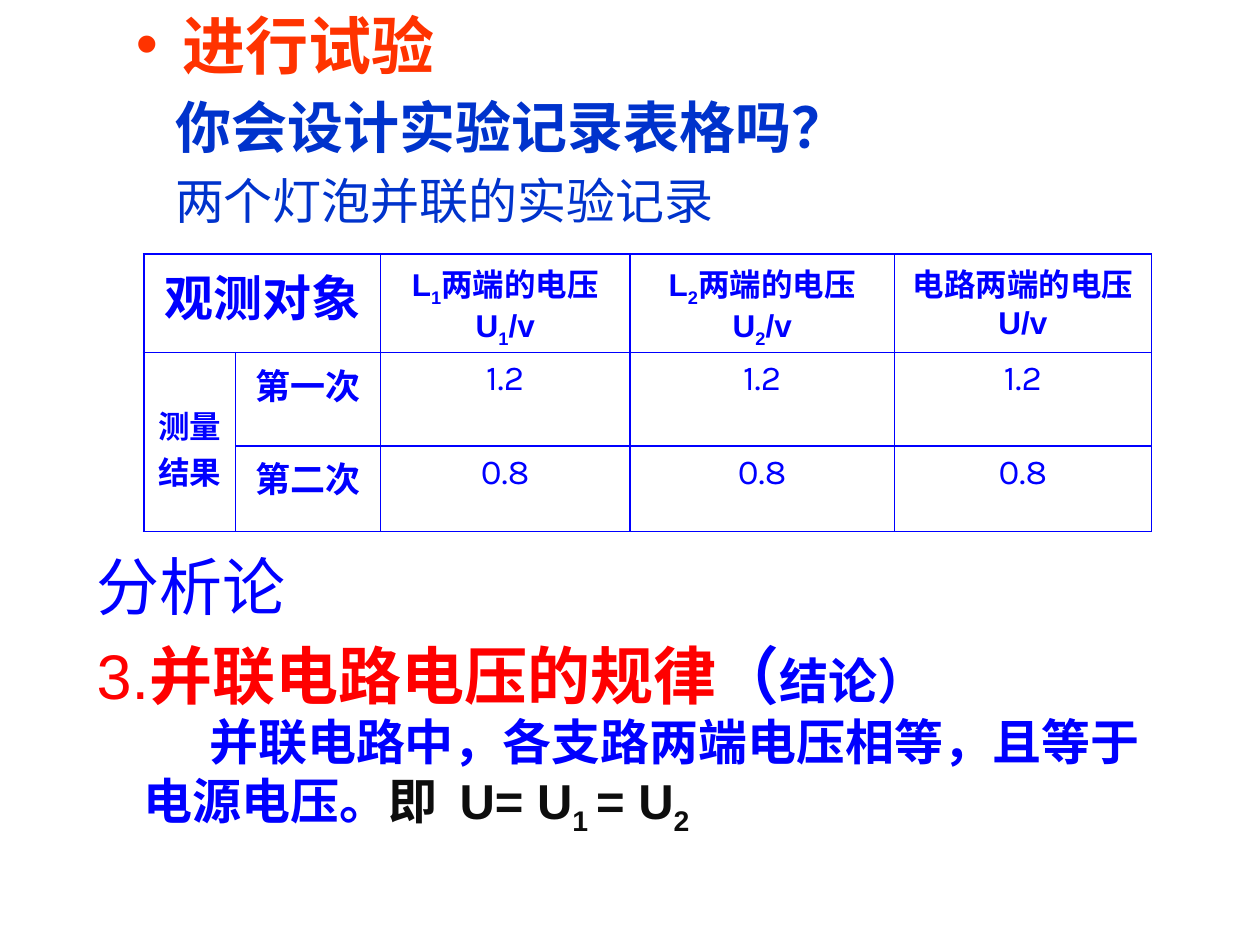
"""Build the slide on recording and concluding the parallel circuit voltage test."""
from dataclasses import dataclass

from lxml import etree
from pptx import Presentation
from pptx.dml.color import RGBColor
from pptx.enum.text import PP_ALIGN
from pptx.oxml.ns import qn
from pptx.util import Cm, Pt

CENTER = PP_ALIGN.CENTER


@dataclass(frozen=True)
class Theme:
    """Colours, fonts and type sizes."""
    orange: str = "FF3300"
    navy: str = "0033CC"
    blue: str = "0000FF"
    red: str = "FF0000"
    ink: str = "0D0D0D"
    body: str = "Calibri"
    sans: str = "Arial"
    figure: str = "Karla"
    title: int = 36
    question: int = 32
    lead: int = 28
    label: int = 20
    cell: int = 18


def add_span(para, text, font, size, color, bold=False, lowered=False):
    """Add one formatted run of text to a paragraph."""
    span = para.add_run()
    span.text = text
    span.font.name = font
    span.font.size = Pt(size)
    span.font.bold = bold
    span.font.color.rgb = RGBColor.from_string(color)
    if lowered:
        span._r.get_or_add_rPr().set("baseline", "-25000")


class Page:
    """Hold the theme and the current slide."""

    def __init__(self, deck, theme):
        """Add a blank slide."""
        self.theme = theme
        self.shapes = deck.slides.add_slide(deck.slide_layouts[6]).shapes

    def text_box(self, left, top, width, height):
        """Add a wrapping text box and return its frame."""
        box = self.shapes.add_textbox(Cm(left), Cm(top), Cm(width), Cm(height))
        box.text_frame.word_wrap = True
        return box.text_frame

    def paragraph(self, frame, spans, before=0.0, margin=0.0, indent=0.0, bullet=None):
        """Write spans into the first empty or a new paragraph."""
        para = frame.paragraphs[0] if not frame.text else frame.add_paragraph()
        para.space_before = Pt(before)
        properties = para._p.get_or_add_pPr()
        properties.set("marL", str(Cm(margin)))
        properties.set("indent", str(Cm(indent)))
        if bullet:
            tint = etree.SubElement(properties, qn("a:buClr"))
            etree.SubElement(tint, qn("a:srgbClr"), val=bullet)
            etree.SubElement(properties, qn("a:buFont"), typeface=self.theme.sans)
            etree.SubElement(properties, qn("a:buChar"), char="•")
        for text, style in spans:
            add_span(para, text, **style)
        return para

    def border(self, cell, heavy_left):
        """Draw the four lines around a cell."""
        properties = cell._tc.get_or_add_tcPr()
        for place, side in enumerate(("L", "R", "T", "B")):
            width = Pt(1.5 if side == "L" and heavy_left else 1)
            line = etree.Element(qn(f"a:ln{side}"), w=str(width))
            fill = etree.SubElement(line, qn("a:solidFill"))
            etree.SubElement(fill, qn("a:srgbClr"), val=self.theme.blue)
            properties.insert(place, line)

    def table(self, left, top, columns, rows):
        """Add a bordered table without fill."""
        table = self.shapes.add_table(len(rows), len(columns), Cm(left), Cm(top),
                                      Cm(sum(columns)), Cm(sum(rows))).table
        table.first_row = table.horz_banding = False
        for column, width in zip(table.columns, columns):
            column.width = Cm(width)
        for row, height in zip(table.rows, rows):
            row.height = Cm(height)
            for index, cell in enumerate(row.cells):
                cell.fill.background()
                self.border(cell, index == 0)
        return table

    def cell_text(self, cell, spans):
        """Write centred spans into a cell."""
        before = 0.2 * spans[0][1]["size"]
        self.paragraph(cell.text_frame, spans, before).alignment = CENTER


def add_introduction(page):
    """Add the heading, the question and the table caption."""
    theme = page.theme
    frame = page.text_box(2.49, 0, 19.69, 5.08)
    heading = dict(font=theme.body, size=theme.title, color=theme.orange, bold=True)
    question = dict(heading, size=theme.question, color=theme.navy)
    caption = dict(question, size=theme.lead, bold=False)
    page.paragraph(frame, [("进行试验", heading)], 7.2, 0.95, -0.95, theme.orange)
    page.paragraph(frame, [("你会设计实验记录表格吗？", question)], 6.4, 0.79)
    page.paragraph(frame, [("两个灯泡并联的实验记录", caption)], 5.6, 0.79)


def add_record(page):
    """Add the table of measured voltages."""
    theme = page.theme
    table = page.table(2.9, 5.12, [1.85, 2.92, 5.03, 5.33, 5.18], [1.78, 1.88, 1.73])
    table.cell(0, 0).merge(table.cell(0, 1))
    table.cell(1, 0).merge(table.cell(2, 0))
    table.cell(1, 0).margin_top = Cm(1)
    head = dict(font=theme.sans, size=theme.cell, color=theme.blue, bold=True)
    lowered = dict(head, lowered=True)
    label = dict(head, size=theme.label)
    figure = dict(label, font=theme.figure, bold=False)

    page.cell_text(table.cell(0, 0), [("观测对象", dict(head, size=theme.lead))])
    for lamp in (1, 2):
        page.cell_text(table.cell(0, lamp + 1), [
            ("L", head), (str(lamp), lowered), ("两端的电压U", head),
            (str(lamp), lowered), ("/v", head)])
    page.cell_text(table.cell(0, 4), [("电路两端的电压U/v", head)])
    page.cell_text(table.cell(1, 0), [("测量结果", head)])
    for row, (trial, voltage) in enumerate([("第一次", "1.2"), ("第二次", "0.8")], 1):
        page.cell_text(table.cell(row, 1), [(trial, label)])
        for column in (2, 3, 4):
            page.cell_text(table.cell(row, column), [(voltage, figure)])


def add_conclusion(page):
    """Add the analysis and the voltage rule."""
    theme = page.theme
    frame = page.text_box(1.7, 10.92, 22.2, 6.05)
    plain = dict(font=theme.sans, size=theme.title, color=theme.blue)
    number = dict(plain, color=theme.red)
    rule = dict(plain, size=theme.lead, bold=True)
    formula = dict(rule, color=theme.ink)
    lowered = dict(formula, lowered=True)
    page.paragraph(frame, [("分析论", plain)], 7.2)
    page.paragraph(frame, [
        ("3.", number), ("并联电路电压的规律", dict(number, bold=True)),
        ("（", dict(plain, bold=True)), ("结论）", rule)], 7.2)
    page.paragraph(frame, [
        ("并联电路中，各支路两端电压相等，且等于电源电压。", rule),
        ("即  U= U", formula), ("1 ", lowered), ("= U", formula), ("2", lowered)],
        margin=0.95, indent=1.32)


def main():
    """Build and save the deck."""
    deck = Presentation()
    deck.slide_width, deck.slide_height = Cm(25.4), Cm(19.05)
    page = Page(deck, Theme())
    add_introduction(page)
    add_record(page)
    add_conclusion(page)
    deck.save("out.pptx")


if __name__ == "__main__":
    main()
